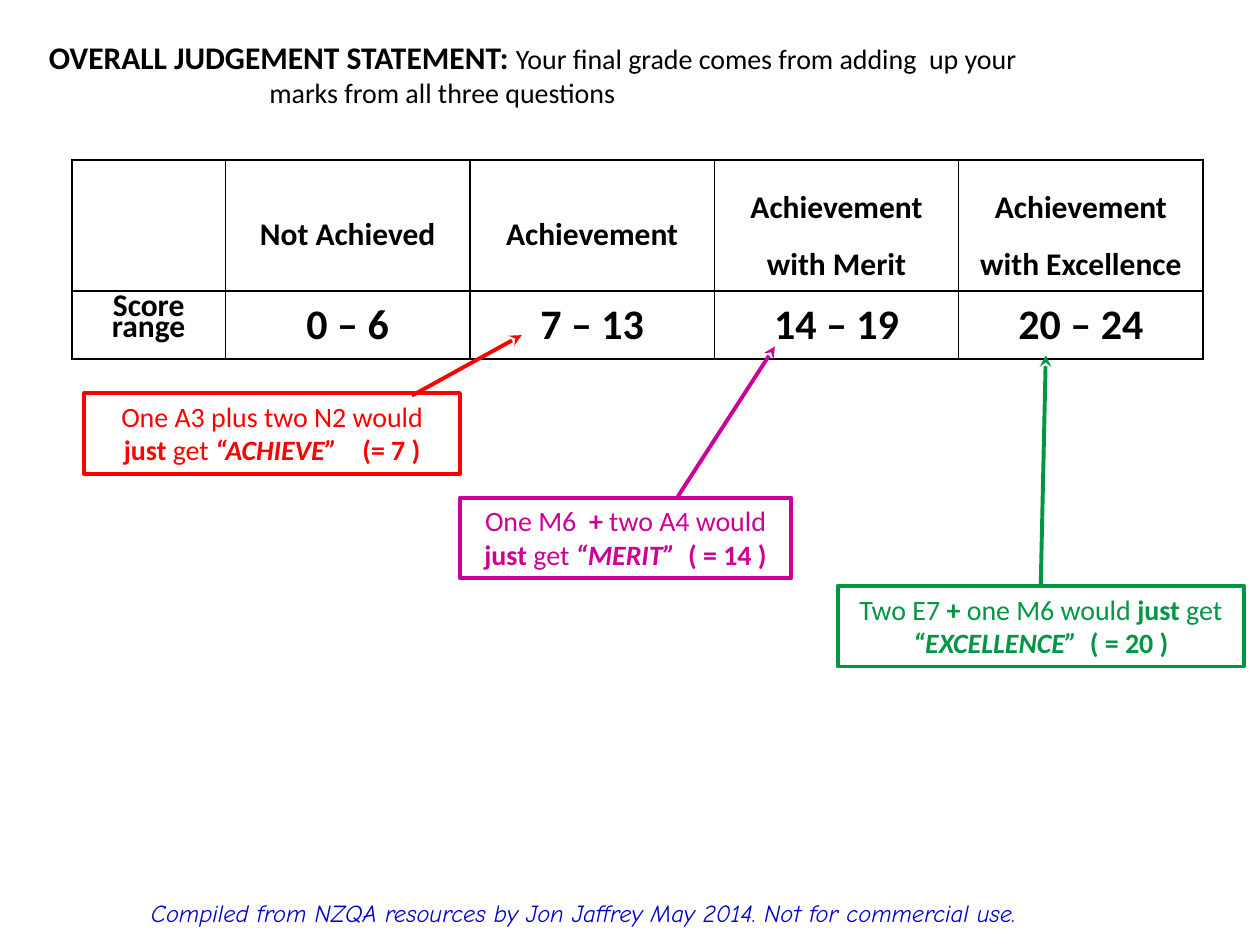
import pptx
import pptx.dml.color
import pptx.enum.dml
import pptx.enum.shapes
import pptx.enum.text
import pptx.oxml.ns
import pptx.util
from lxml import etree

Inches = pptx.util.Inches
Pt = pptx.util.Pt
RGBColor = pptx.dml.color.RGBColor
qn = pptx.oxml.ns.qn
CENTER = pptx.enum.text.PP_ALIGN.CENTER
MIDDLE = pptx.enum.text.MSO_ANCHOR.MIDDLE

BLACK = RGBColor(0x00, 0x00, 0x00)
BLUE = RGBColor(0x00, 0x00, 0xCC)
RED = RGBColor(0xFF, 0x00, 0x00)
MAGENTA = RGBColor(0xCC, 0x00, 0x99)
GREEN = RGBColor(0x00, 0x96, 0x44)


def write(paragraph, text, size=16, color=BLACK, bold=False, italic=False, font="Calibri"):
    run = paragraph.add_run()
    run.text = text
    run.font.name = font
    run.font.size = Pt(size)
    run.font.bold = bold
    run.font.italic = italic
    run.font.color.rgb = color


class GradeSlide:
    """Holds the slide and the shared style of its elements."""

    line_width = Pt(2.25)
    border_width = Pt(1)

    def __init__(self, deck):
        self.shapes = deck.slides.add_slide(deck.slide_layouts[6]).shapes

    def text(self, box, wrap=True):
        frame = self.shapes.add_textbox(*map(Inches, box)).text_frame
        frame.word_wrap = wrap
        return frame.paragraphs[0]

    def callout(self, box, color, runs):
        callout = self.shapes.add_shape(pptx.enum.shapes.MSO_SHAPE.RECTANGLE, *map(Inches, box))
        callout.shadow.inherit = False
        callout.fill.background()
        callout.line.color.rgb = color
        callout.line.width = self.line_width
        callout.text_frame.word_wrap = True
        callout.text_frame.vertical_anchor = pptx.enum.text.MSO_ANCHOR.TOP
        paragraph = callout.text_frame.paragraphs[0]
        paragraph.alignment = CENTER
        for words, style in runs:
            write(paragraph, words, color=color, bold="b" in style, italic="i" in style)

    def arrow(self, start, end, color):
        arrow = self.shapes.add_connector(
            pptx.enum.shapes.MSO_CONNECTOR.STRAIGHT, *map(Inches, start + end))
        arrow.line.color.rgb = color
        arrow.line.width = self.line_width
        etree.SubElement(arrow.line._get_or_add_ln(), qn("a:tailEnd"), type="stealth")
        etree.SubElement(arrow._element.spPr, qn("a:effectLst"))

    def border(self, cell):
        properties = cell._tc.get_or_add_tcPr()
        for position, side in enumerate(("a:lnL", "a:lnR", "a:lnT", "a:lnB")):
            edge = etree.Element(qn(side), w=str(self.border_width))
            fill = etree.SubElement(edge, qn("a:solidFill"))
            etree.SubElement(fill, qn("a:srgbClr"), val=str(BLACK))
            properties.insert(position, edge)

    def cell(self, cell, text, size=18, spacing=None):
        cell.fill.background()
        self.border(cell)
        cell.margin_left = cell.margin_right = Inches(0.06)
        cell.margin_top = cell.margin_bottom = Inches(0.07)
        if not text:
            return
        paragraph = cell.text_frame.paragraphs[0]
        paragraph.alignment = CENTER
        if spacing:
            cell.vertical_anchor = MIDDLE
            paragraph.line_spacing = spacing
            paragraph.space_before = Pt(3)
        write(paragraph, text, size=size, bold=True)

    def grade_table(self, box, column_widths, row_heights, grades, scores):
        table = self.shapes.add_table(
            len(row_heights), len(column_widths), *map(Inches, box)).table
        table.first_row = table.horz_banding = False
        for column, width in zip(table.columns, column_widths):
            column.width = Inches(width)
        for row, height in zip(table.rows, row_heights):
            row.height = Inches(height)
        for index, (grade, score) in enumerate(zip(grades, scores)):
            self.cell(table.cell(0, index), grade, spacing=1.5)
            if index:
                self.cell(table.cell(1, index), score, size=24)
            else:
                self.cell(table.cell(1, index), score, spacing=Pt(12))


def main():
    deck = pptx.Presentation()
    deck.slide_width = Inches(10)
    deck.slide_height = Inches(7.5)
    slide = GradeSlide(deck)

    credit = slide.text((1.1, 7.08, 7.96, 0.34), wrap=False)
    write(credit, "Compiled from NZQA resources by Jon Jaffrey May 2014. Not for commercial use.",
          size=14, color=BLUE, italic=True, font="Comic Neue")

    statement = slide.text((0.29, 0.25, 8.06, 0.67))
    hanging = statement._p.get_or_add_pPr()
    hanging.set("marL", str(Inches(1.75)))
    hanging.set("indent", str(-Inches(1.75)))
    write(statement, "OVERALL JUDGEMENT STATEMENT: ", size=18, bold=True)
    write(statement, "Your final grade comes from adding  up your marks from all three questions")

    slide.grade_table(
        (0.57, 1.27, 9, 1.56), [1.22] + [1.94] * 4, [1.03, 0.53],
        ["", "Not Achieved", "Achievement", "Achievement with Merit", "Achievement with Excellence"],
        ["Score range", "0 – 6", "7 – 13", "14 – 19", "20 – 24"])

    examples = [
        ((0.67, 3.12, 2.98, 0.64), (3.27, 3.14), (4.14, 2.66), RED,
         [("One A3 plus two N2 would ", ""), ("just", "b"), (" get ", ""),
          ("“ACHIEVE”    ", "bi"), ("(= 7 )", "b")]),
        ((3.65, 3.95, 2.63, 0.64), (5.38, 3.94), (6.15, 2.75), MAGENTA,
         [("One M6  ", ""), ("+", "b"), (" two A4 would ", ""), ("just ", "b"), ("get ", ""),
          ("“MERIT”  ", "bi"), ("( = 14 )", "b")]),
        ((6.65, 4.65, 3.22, 0.64), (8.26, 4.65), (8.3, 2.82), GREEN,
         [("Two E7 ", ""), ("+", "b"), (" one M6 would ", ""), ("just", "b"), (" get ", ""),
          ("“EXCELLENCE”  ", "bi"), ("( = 20 )", "b")]),
    ]
    for box, start, end, color, runs in examples:
        slide.callout(box, color, runs)
        slide.arrow(start, end, color)

    deck.save("out.pptx")


if __name__ == "__main__":
    main()
